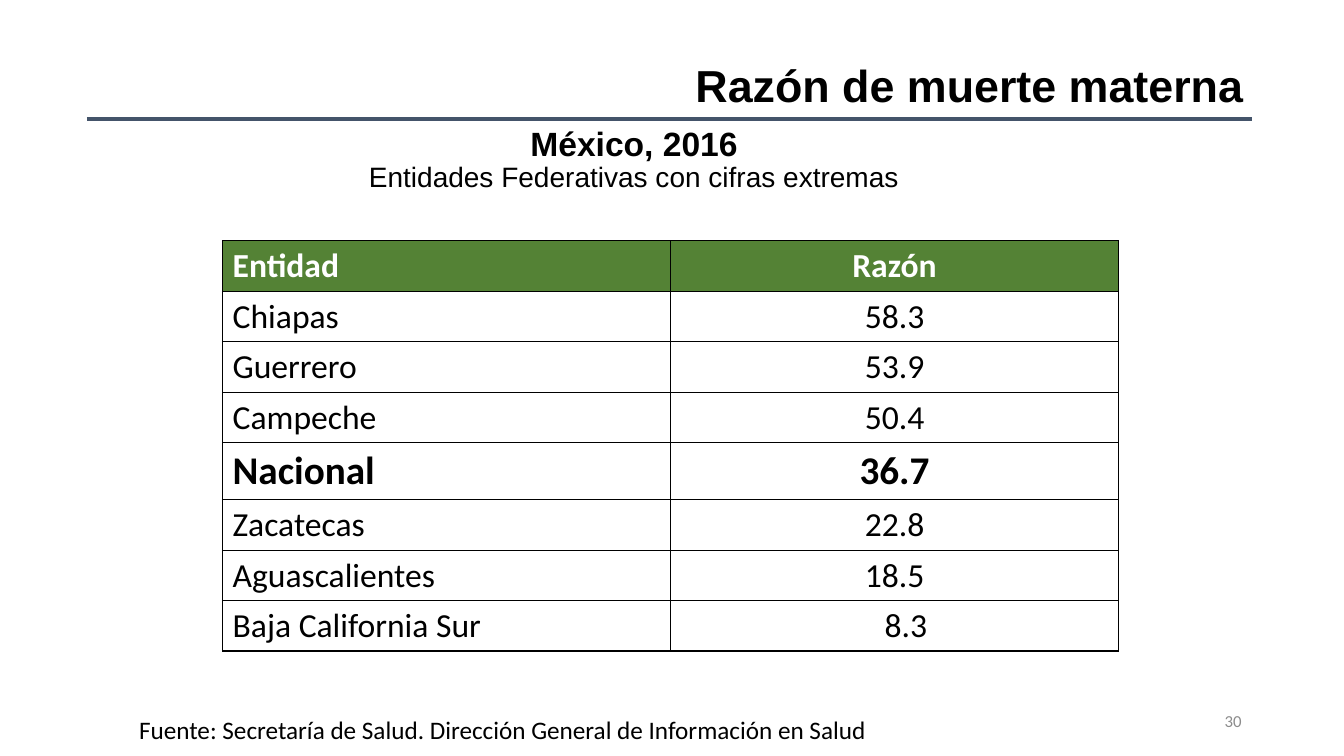
from lxml import etree
from pptx import Presentation
from pptx.dml.color import RGBColor
from pptx.enum.shapes import MSO_CONNECTOR
from pptx.enum.text import MSO_ANCHOR, PP_ALIGN
from pptx.oxml.ns import qn
from pptx.util import Pt

TITLE = "Razón de muerte materna"
PLACE = "México, 2016"
SCOPE = "Entidades Federativas con cifras extremas"
SOURCE = "Fuente: Secretaría de Salud. Dirección General de Información en Salud"
PAGE = "30"
HEAD = "Entidad"
MEAN = "Nacional"
ROWS = [
    (HEAD, "Razón"),
    ("Chiapas", "58.3"),
    ("Guerrero", "53.9"),
    ("Campeche", "50.4"),
    (MEAN, "36.7"),
    ("Zacatecas", "22.8"),
    ("Aguascalientes", "18.5"),
    ("Baja California Sur", "8.3"),
]

BLACK = RGBColor(0, 0, 0)
WHITE = RGBColor(255, 255, 255)
GREEN = RGBColor(0x54, 0x82, 0x35)
SLATE = RGBColor(0x44, 0x54, 0x6A)
GRAY = RGBColor(0x8C, 0x8C, 0x8C)
LEFT, MID, RIGHT = PP_ALIGN.LEFT, PP_ALIGN.CENTER, PP_ALIGN.RIGHT
CENTER, BOTTOM, TOP = MSO_ANCHOR.MIDDLE, MSO_ANCHOR.BOTTOM, MSO_ANCHOR.TOP
LINE = MSO_CONNECTOR.STRAIGHT

COL_W = 320
ROW_H, MEAN_H = 36, 40.8
INSET = 23.5


def style(para, size, font="Calibri", color=BLACK, bold=False, align=LEFT):
    para.alignment = align
    for run in para.runs:
        run.font.size = Pt(size)
        run.font.name = font
        run.font.bold = bold
        run.font.color.rgb = color


def place(shape, x, y, w, h):
    shape.left, shape.top, shape.width, shape.height = Pt(x), Pt(y), Pt(w), Pt(h)


def add_text(text, x, y, w, h, anchor, wrap=True):
    box = slide.shapes.add_textbox(Pt(x), Pt(y), Pt(w), Pt(h))
    frame = box.text_frame
    frame.text = text
    frame.word_wrap = wrap
    frame.vertical_anchor = anchor
    return frame.paragraphs


def add_edges(cell):
    props = cell._tc.get_or_add_tcPr()
    for spot, side in enumerate(("a:lnL", "a:lnR", "a:lnT", "a:lnB")):
        edge = etree.Element(qn(side), w=str(Pt(1)))
        fill = etree.SubElement(edge, qn("a:solidFill"))
        etree.SubElement(fill, qn("a:srgbClr"), val=str(BLACK))
        props.insert(spot, edge)


deck = Presentation()
deck.slide_width, deck.slide_height = Pt(960), Pt(540)
slide = deck.slides.add_slide(deck.slide_layouts[5])

title = slide.shapes.title
place(title, 67.7, 10.8, 828, 104.4)
title.text_frame.text = TITLE
title.text_frame.vertical_anchor = CENTER
para = title.text_frame.paragraphs[0]
para.line_spacing = 0.9
style(para, 32, "Arial", bold=True, align=RIGHT)

rule = slide.shapes.add_connector(LINE, Pt(62), Pt(85), Pt(894), Pt(85))
rule.line.color.rgb = SLATE
rule.line.width = Pt(3)
etree.SubElement(rule._element.spPr, qn("a:effectLst"))

heads = add_text(PLACE + "\n" + SCOPE, 38.9, 37.4, 828, 104.4, BOTTOM)
for para, size, bold in zip(heads, (24, 20), (True, False)):
    para.line_spacing = 0.9
    style(para, size, "Arial", bold=bold, align=MID)

style(add_text(SOURCE, 92.2, 506.9, 540.7, 29, TOP, False)[0], 18)
style(add_text(PAGE, 678, 500.4, 216, 28.8, CENTER)[0], 12, color=GRAY, align=RIGHT)

high = ROW_H * (len(ROWS) - 1) + MEAN_H
table = slide.shapes.add_table(
    len(ROWS), 2, Pt(159), Pt(172), Pt(2 * COL_W), Pt(high)
).table
table.first_row = table.horz_banding = False
for col in table.columns:
    col.width = Pt(COL_W)
for r, row in enumerate(ROWS):
    top, mean = row[0] == HEAD, row[0] == MEAN
    table.rows[r].height = Pt(MEAN_H if mean else ROW_H)
    for c, text in enumerate(row):
        cell = table.cell(r, c)
        cell.text_frame.text = text
        style(
            cell.text_frame.paragraphs[0],
            28 if mean else 24,
            color=WHITE if top else BLACK,
            bold=top or mean,
            align=MID if c else LEFT,
        )
        if top:
            cell.fill.solid()
            cell.fill.fore_color.rgb = GREEN
        else:
            cell.fill.background()
        add_edges(cell)
table.cell(len(ROWS) - 1, 1).margin_left = Pt(INSET)

deck.save("out.pptx")
